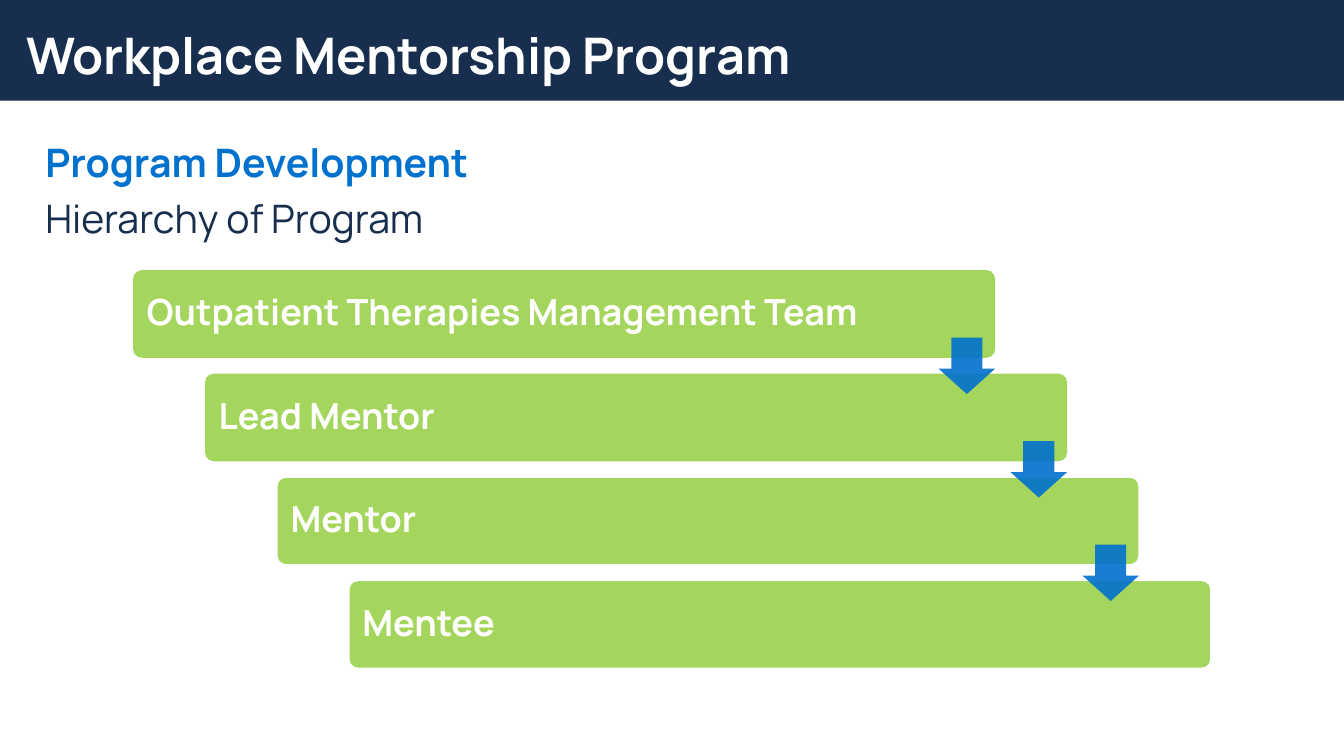
from dataclasses import dataclass
from lxml.etree import SubElement
from pptx import Presentation
from pptx.dml.color import RGBColor
from pptx.enum.shapes import MSO_SHAPE as Shape
from pptx.enum.text import MSO_ANCHOR as Anchor, MSO_AUTO_SIZE as AutoSize, PP_ALIGN as Align
from pptx.oxml.ns import qn
from pptx.util import Pt

TITLE = "Workplace Mentorship Program"
HEADING = "Program Development"
SUBHEADING = "Hierarchy of Program"
LEVELS = ["Outpatient Therapies Management Team", "Lead Mentor", "Mentor", "Mentee"]
OUTLINED_LEVELS = {"Mentor", "Mentee"}

EMU_PER_PX = 9144
PAGE_SIZE = (1333, 750)
BAND = (0, 0, 1333, 100)
TITLE_AREA = (16, 15, 1150, 85)
BODY_AREA = (35, 137, 1203, 540)
FIRST_BAR = (132, 268)
LAST_BAR = (346, 576)
BAR_SIZE = (855, 87)
BAR_INSET = 11
ARROW_SIDE = 56
ARROW_DROP = 67


@dataclass(frozen=True)
class Theme:
    font: str = "Manrope"
    navy: str = "182E4F"
    blue: str = "0072CE"
    arrow: str = "0171CD"
    green: str = "A4D65E"
    white: str = "FFFFFF"
    title_size: float = 36
    body_size: float = 28
    bar_size: float = 25.7
    line_spacing: float = 0.9
    arrow_alpha: int = 90


THEME = Theme()


def px(value):
    return round(value * EMU_PER_PX)


def place(shape, area):
    shape.left, shape.top, shape.width, shape.height = map(px, area)


def style(para, size, color, bold=True):
    para.alignment = Align.LEFT
    para.line_spacing = THEME.line_spacing
    font = para.font
    font.name, font.size, font.bold = THEME.font, Pt(size), bold
    font.color.rgb = RGBColor.from_string(color)


def add_block(page, kind, area, color):
    shape = page.shapes.add_shape(kind, *map(px, area))
    shape.shadow.inherit = False
    shape.fill.solid()
    shape.fill.fore_color.rgb = RGBColor.from_string(color)
    shape.line.fill.background()
    return shape


def add_heading(page):
    band = add_block(page, Shape.RECTANGLE, BAND, THEME.navy)
    band.element.getparent().insert(2, band.element)
    title = page.shapes.title
    place(title, TITLE_AREA)
    frame = title.text_frame
    frame.text = TITLE
    frame.auto_size = AutoSize.NONE
    frame.vertical_anchor = Anchor.MIDDLE
    style(frame.paragraphs[0], THEME.title_size, THEME.white)


def add_body(page):
    body = page.placeholders[1]
    place(body, BODY_AREA)
    frame = body.text_frame
    frame.text = f"{HEADING}\n{SUBHEADING}"
    frame.auto_size = AutoSize.NONE
    looks = [(THEME.blue, True, 0), (THEME.navy, False, 10)]
    for para, (color, bold, space) in zip(frame.paragraphs, looks):
        properties = para._p.get_or_add_pPr()
        properties.set("marL", "0")
        properties.set("indent", "0")
        SubElement(properties, qn("a:buNone"))
        para.space_before = Pt(space)
        style(para, THEME.body_size, color, bold)


def bar_corner(index):
    share = index / (len(LEVELS) - 1)
    return [first + (last - first) * share for first, last in zip(FIRST_BAR, LAST_BAR)]


def add_bar(page, index, label):
    bar = add_block(page, Shape.ROUNDED_RECTANGLE, (*bar_corner(index), *BAR_SIZE), THEME.green)
    bar.adjustments[0] = 0.1
    if label in OUTLINED_LEVELS:
        bar.line.color.rgb = RGBColor.from_string(THEME.white)
        bar.line.width = Pt(1)
    frame = bar.text_frame
    frame.text = label
    frame.word_wrap = True
    frame.vertical_anchor = Anchor.MIDDLE
    frame.margin_left = frame.margin_right = px(BAR_INSET)
    frame.margin_top = frame.margin_bottom = px(BAR_INSET)
    style(frame.paragraphs[0], THEME.bar_size, THEME.white)


def add_arrow(page, index):
    left, top = bar_corner(index)
    area = (left + BAR_SIZE[0] - ARROW_SIDE, top + ARROW_DROP, ARROW_SIDE, ARROW_SIDE)
    arrow = add_block(page, Shape.DOWN_ARROW, area, THEME.arrow)
    arrow.adjustments[0], arrow.adjustments[1] = 0.55, 0.45
    color = arrow.element.spPr.find(qn("a:solidFill"))[0]
    SubElement(color, qn("a:alpha")).set("val", str(THEME.arrow_alpha * 1000))


def main():
    deck = Presentation()
    deck.slide_width, deck.slide_height = map(px, PAGE_SIZE)
    page = deck.slides.add_slide(deck.slide_layouts[1])
    add_heading(page)
    add_body(page)
    for index, label in enumerate(LEVELS):
        add_bar(page, index, label)
    for index in range(len(LEVELS) - 1):
        add_arrow(page, index)
    deck.save("out.pptx")


if __name__ == "__main__":
    main()
